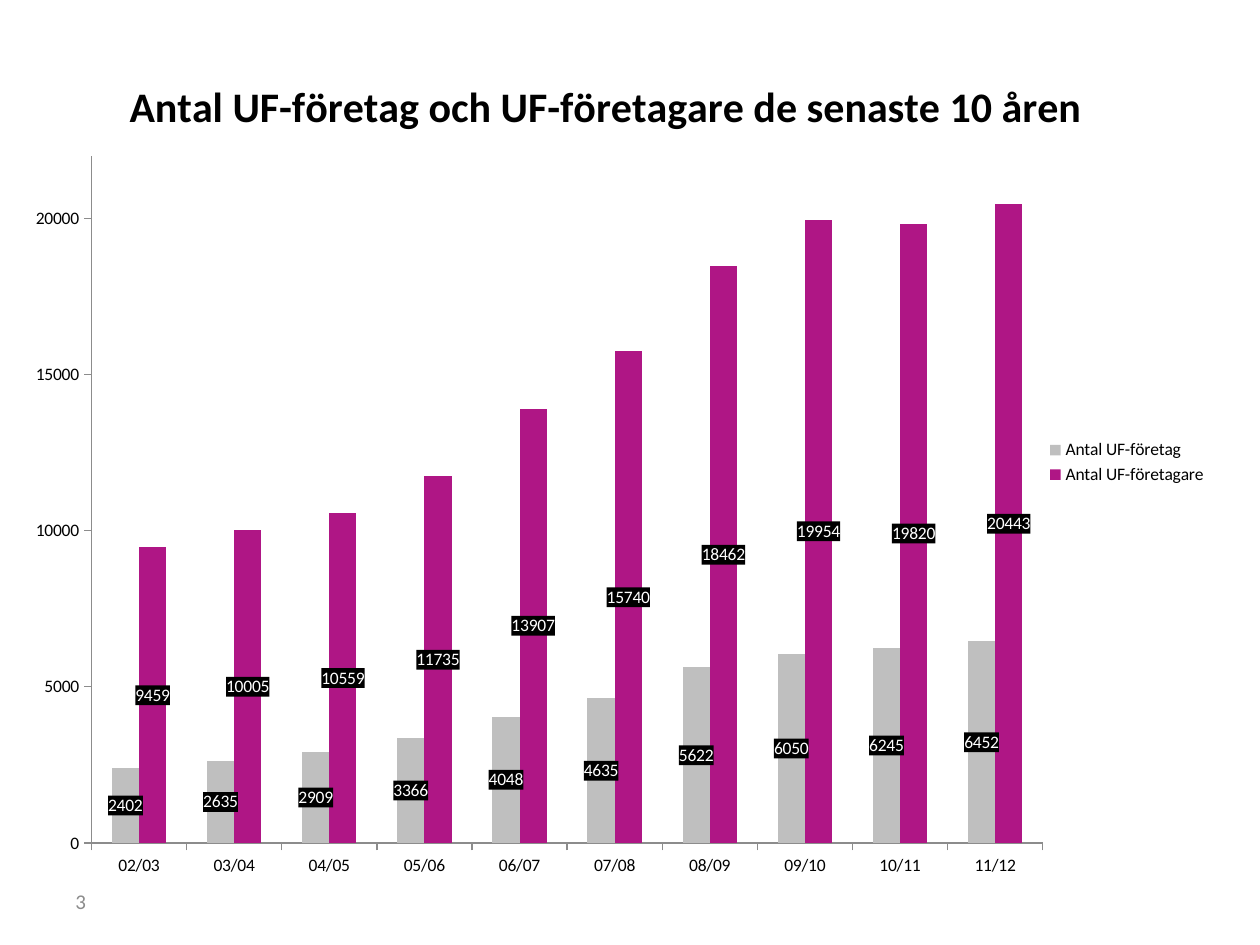
from lxml import etree
from pptx import Presentation
from pptx import util as u
from pptx.chart.data import CategoryChartData
from pptx.dml.color import RGBColor
from pptx.enum import chart as ch
from pptx.enum import text
from pptx.oxml import ns

WIDTH, HEIGHT = u.Inches(10), u.Inches(7.5)
BLACK = RGBColor(0x00, 0x00, 0x00)
WHITE = RGBColor(0xFF, 0xFF, 0xFF)
GRAY = RGBColor(0x8C, 0x8C, 0x8C)
SILVER = RGBColor(0xBF, 0xBF, 0xBF)
MAGENTA = RGBColor(0xAF, 0x16, 0x85)
FONT = "Calibri"

TITLE = "Antal UF-företag och UF-företagare de senaste 10 åren"
SCHOOL_YEARS = [f"{year:02}/{year + 1:02}" for year in range(2, 12)]
SERIES = [
    ("Antal UF-företag", SILVER,
     [2402, 2635, 2909, 3366, 4048, 4635, 5622, 6050, 6245, 6452]),
    ("Antal UF-företagare", MAGENTA,
     [9459, 10005, 10559, 11735, 13907, 15740, 18462, 19954, 19820, 20443]),
]


def set_font(font, size, color, bold=False):
    font.name = FONT
    font.size = u.Pt(size)
    font.bold = bold
    font.color.rgb = color


def set_layout(element, index, **shares):
    for old in element.findall(ns.qn("c:layout")):
        element.remove(old)
    layout = etree.Element(ns.qn("c:layout"))
    manual = etree.SubElement(layout, ns.qn("c:manualLayout"))
    settings = {"xMode": "edge", "yMode": "edge", **shares}
    if "w" in shares:
        settings = {"layoutTarget": "inner", **settings}
    for name, value in settings.items():
        etree.SubElement(manual, ns.qn(f"c:{name}"), val=str(value))
    element.insert(index, layout)


def add_title(chart):
    chart.has_title = True
    title = chart.chart_title
    paragraph = title.text_frame.paragraphs[0]
    paragraph.text = TITLE
    set_font(paragraph.font, 24, BLACK, bold=True)
    title_element = chart._chartSpace.chart.find(ns.qn("c:title"))
    set_layout(title_element, 1, x=0.1, y=0.04)
    title_element.find(ns.qn("c:overlay")).set("val", "1")


def style_axis(axis):
    axis.has_major_gridlines = False
    axis.major_tick_mark = ch.XL_TICK_MARK.OUTSIDE
    axis.minor_tick_mark = ch.XL_TICK_MARK.NONE
    axis.format.line.color.rgb = GRAY
    axis.format.line.width = u.Pt(0.75)


def style_series(series, color):
    series.format.fill.solid()
    series.format.fill.fore_color.rgb = color
    labels = series.data_labels
    labels.show_value = True
    labels.position = ch.XL_LABEL_POSITION.CENTER
    set_font(labels.font, 10, WHITE)
    properties = etree.Element(ns.qn("c:spPr"))
    fill = etree.SubElement(properties, ns.qn("a:solidFill"))
    etree.SubElement(fill, ns.qn("a:srgbClr"), val=str(BLACK))
    labels._element.find(ns.qn("c:txPr")).addprevious(properties)


def add_column_chart(slide):
    data = CategoryChartData()
    data.categories = SCHOOL_YEARS
    for name, _, values in SERIES:
        data.add_series(name, values)
    frame = slide.shapes.add_chart(
        ch.XL_CHART_TYPE.COLUMN_CLUSTERED, 0, u.Inches(0.29),
        u.Inches(9.68), u.Inches(6.76), data)
    chart = frame.chart
    set_font(chart.font, 10, BLACK)
    add_title(chart)
    set_layout(chart._chartSpace.chart.plotArea, 0,
               x=0.075, y=0.14, w=0.78, h=0.807)
    style_axis(chart.category_axis)
    style_axis(chart.value_axis)
    chart.value_axis.minimum_scale = 0
    chart.value_axis.maximum_scale = 22000
    chart.value_axis.major_unit = 5000
    chart.has_legend = True
    chart.legend.position = ch.XL_LEGEND_POSITION.RIGHT
    chart.legend.include_in_layout = False
    plot = chart.plots[0]
    plot.vary_by_categories = False
    plot.gap_width = 150
    plot.overlap = 0
    for series, (_, color, _) in zip(plot.series, SERIES):
        style_series(series, color)


def add_page_number(slide, number):
    box = slide.shapes.add_textbox(
        int(WIDTH * 0.05), u.Inches(6.95), u.Inches(2.33), u.Inches(0.4))
    frame = box.text_frame
    frame.word_wrap = True
    frame.vertical_anchor = text.MSO_ANCHOR.MIDDLE
    paragraph = frame.paragraphs[0]
    paragraph.text = number
    set_font(paragraph.font, 12, GRAY)


def main():
    presentation = Presentation()
    presentation.slide_width, presentation.slide_height = WIDTH, HEIGHT
    slide = presentation.slides.add_slide(presentation.slide_layouts[6])
    add_page_number(slide, "3")
    add_column_chart(slide)
    presentation.save("out.pptx")


if __name__ == "__main__":
    main()
